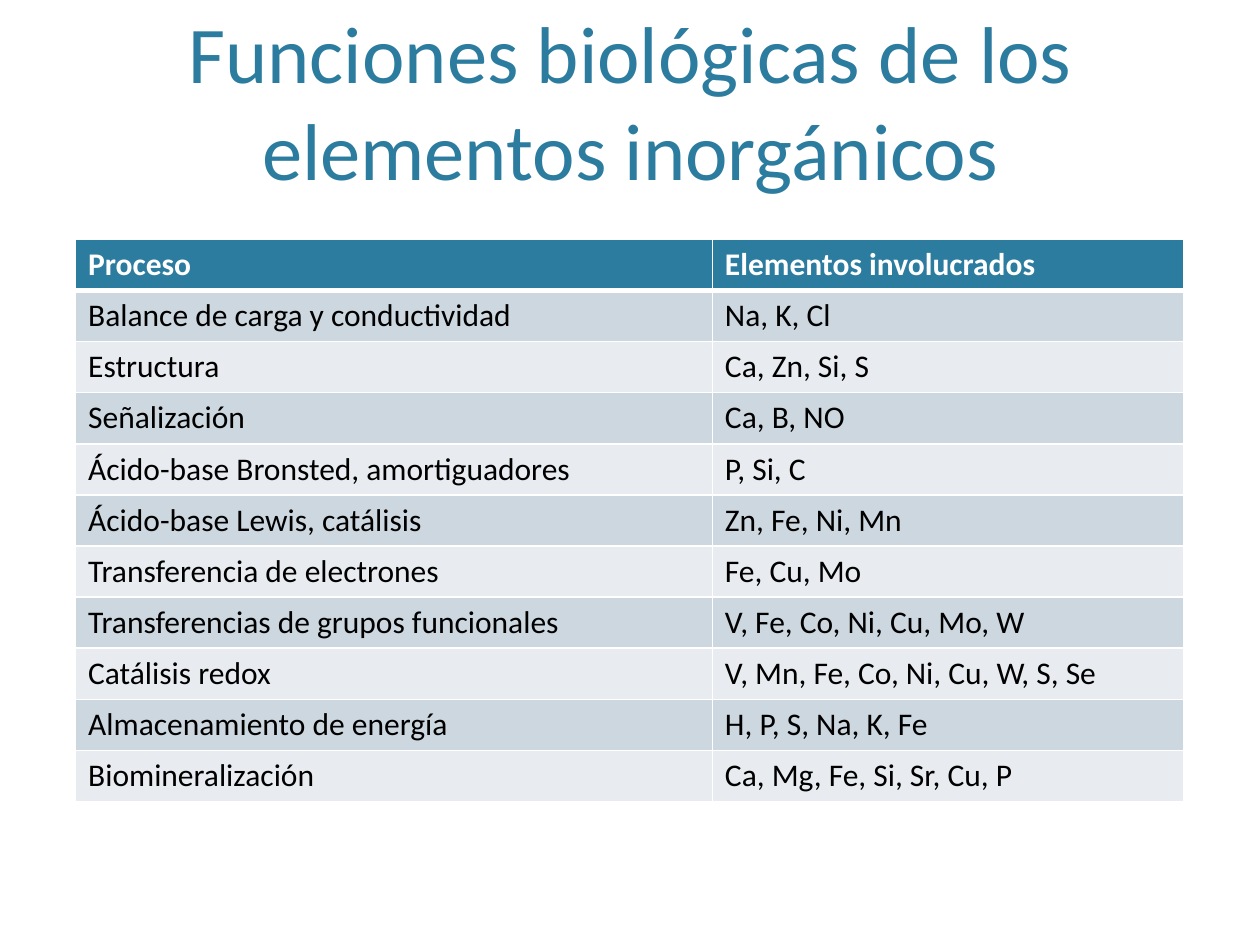
from dataclasses import dataclass

from lxml.etree import SubElement
from pptx import Presentation
from pptx.dml.color import RGBColor
from pptx.enum.text import MSO_ANCHOR, PP_ALIGN
from pptx.oxml.ns import qn
from pptx.util import Pt


@dataclass(frozen=True)
class Theme:
    font: str = "Calibri"
    title_size: float = 46
    body_size: float = 18
    accent: str = "2C7C9F"
    white: str = "FFFFFF"
    black: str = "000000"
    bands: tuple = ("CDD7DF", "E8ECF0")
    rule: float = 1
    header_rule: float = 3


class SlideBuilder:
    def __init__(self, prs, theme):
        self.theme = theme
        self.slide = prs.slides.add_slide(prs.slide_layouts[6])

    def text(self, tf, text, size, color, bold=False, align=PP_ALIGN.LEFT):
        p = tf.paragraphs[0]
        p.alignment = align
        r = p.add_run()
        r.text = text
        fmt = {"name": self.theme.font, "size": Pt(size), "bold": bold}
        for key, value in fmt.items():
            setattr(r.font, key, value)
        r.font.color.rgb = RGBColor.from_string(color)

    def title(self, text, left, top, width, height):
        sp = self.slide.shapes.add_textbox(Pt(left), Pt(top), Pt(width), Pt(height))
        tf = sp.text_frame
        fmt = {
            "word_wrap": True,
            "vertical_anchor": MSO_ANCHOR.BOTTOM,
            "margin_top": 0,
            "margin_bottom": Pt(1.5),
        }
        for key, value in fmt.items():
            setattr(tf, key, value)
        self.text(tf, text, self.theme.title_size, self.theme.accent,
                  align=PP_ALIGN.CENTER)

    def borders(self, cell, widths):
        tc_pr = cell._tc.get_or_add_tcPr()
        for i, (side, width) in enumerate(widths.items()):
            ln = SubElement(tc_pr, qn(f"a:ln{side}"), w=str(Pt(width)))
            fill = SubElement(ln, qn("a:solidFill"))
            SubElement(fill, qn("a:srgbClr"), val=self.theme.white)
            tc_pr.remove(ln)
            tc_pr.insert(i, ln)

    def table(self, rows, left, top, col_widths, row_height):
        th = self.theme
        shape = self.slide.shapes.add_table(
            len(rows), len(col_widths), Pt(left), Pt(top),
            Pt(sum(col_widths)), Pt(row_height * len(rows)))
        table = shape.table
        for col, width in zip(table.columns, col_widths):
            col.width = Pt(width)
        for i, texts in enumerate(rows):
            table.rows[i].height = Pt(row_height)
            header = i == 0
            fill = th.accent if header else th.bands[(i - 1) % 2]
            color = th.white if header else th.black
            widths = {
                "L": th.rule,
                "R": th.rule,
                "T": th.header_rule if i == 1 else th.rule,
                "B": th.header_rule if header else th.rule,
            }
            for j, text in enumerate(texts):
                cell = table.cell(i, j)
                cell.fill.solid()
                cell.fill.fore_color.rgb = RGBColor.from_string(fill)
                self.text(cell.text_frame, text, th.body_size, color, header)
                self.borders(cell, widths)


ROWS = [
    ("Proceso", "Elementos involucrados"),
    ("Balance de carga y conductividad", "Na, K, Cl"),
    ("Estructura", "Ca, Zn, Si, S"),
    ("Señalización", "Ca, B, NO"),
    ("Ácido-base Bronsted, amortiguadores", "P, Si, C"),
    ("Ácido-base Lewis, catálisis", "Zn, Fe, Ni, Mn"),
    ("Transferencia de electrones", "Fe, Cu, Mo"),
    ("Transferencias de grupos funcionales", "V, Fe, Co, Ni, Cu, Mo, W"),
    ("Catálisis redox", "V, Mn, Fe, Co, Ni, Cu, W, S, Se"),
    ("Almacenamiento de energía", "H, P, S, Na, K, Fe"),
    ("Biomineralización", "Ca, Mg, Fe, Si, Sr, Cu, P"),
]


def main():
    prs = Presentation()
    prs.slide_width, prs.slide_height = Pt(720), Pt(540)
    s = SlideBuilder(prs, Theme())
    s.title("Funciones biológicas de los elementos inorgánicos", 43.2, 8.6, 633.6, 105.1)
    s.table(ROWS, 43.2, 136.8, (363.9, 269.3), 29.2)
    prs.save("out.pptx")


if __name__ == "__main__":
    main()
